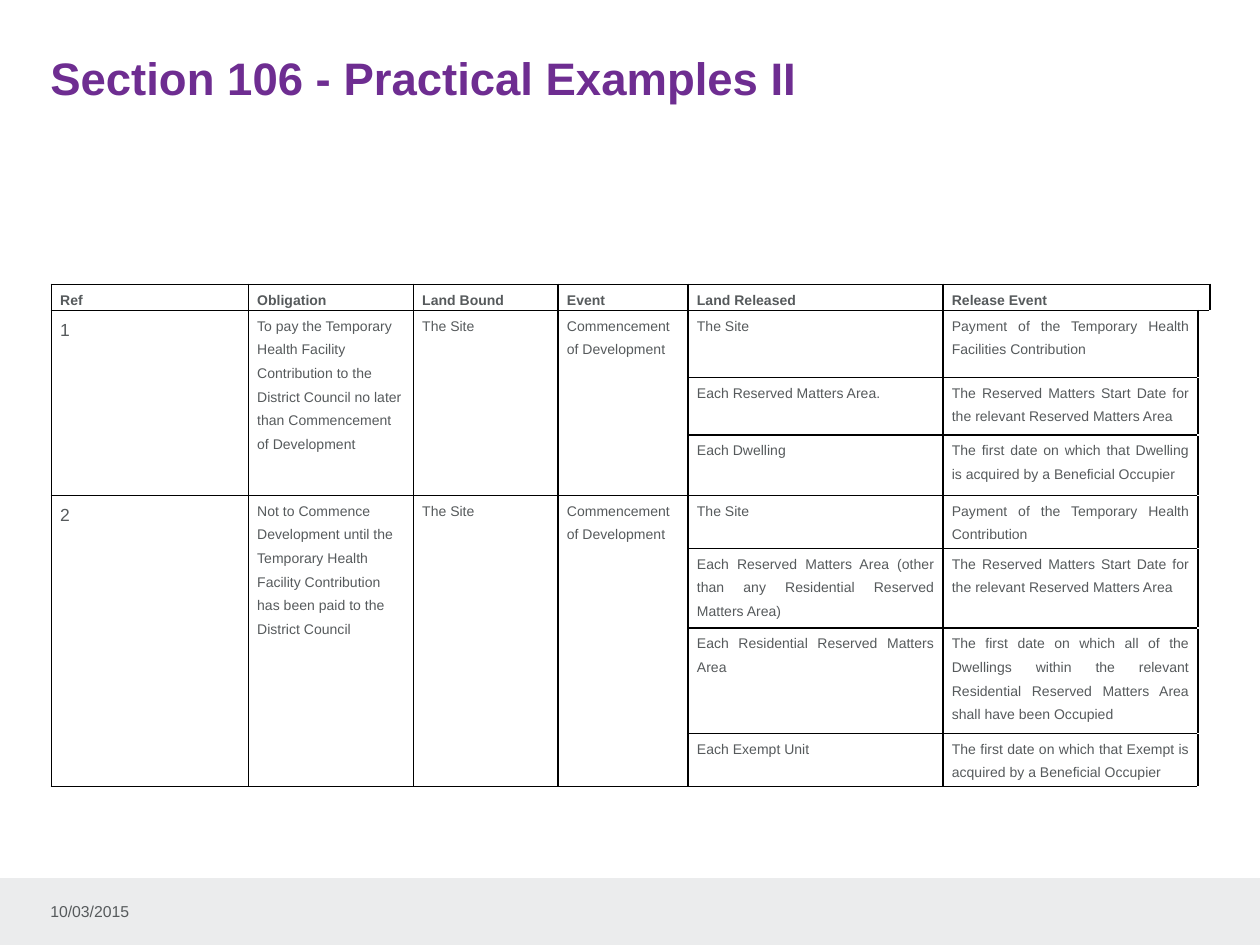
from pptx import Presentation
from pptx.dml.color import RGBColor
from pptx.enum.shapes import MSO_SHAPE as Form
from pptx.enum.text import MSO_ANCHOR as Anchor, PP_ALIGN as Align
from pptx.oxml import parse_xml
from pptx.oxml.ns import nsdecls
from pptx.util import Pt

PURPLE = RGBColor(0x6E, 0x2D, 0x91)
GREY = RGBColor(0x56, 0x5A, 0x5C)
PALE = RGBColor(0xEB, 0xEC, 0xED)
BLACK = RGBColor(0, 0, 0)

COLS = [112.6, 94.3, 82.7, 74.3, 145.7, 145.7, 6.9]
ROWS = [15, 38.2, 33, 34.5, 30.2, 45.6, 60.2, 30.2]
HEADS = ["Ref", "Obligation", "Land Bound", "Event", "Land Released", "Release Event"]
START = "The Reserved Matters Start Date for the relevant Reserved Matters Area"
GROUPS = [
    (["1", "To pay the Temporary Health Facility Contribution to the District Council "
      "no later than Commencement of Development", "The Site", "Commencement of Development"],
     [("The Site", "Payment of the Temporary Health Facilities Contribution"),
      ("Each Reserved Matters Area.", START),
      ("Each Dwelling", "The first date on which that Dwelling is acquired by a "
       "Beneficial Occupier")]),
    (["2", "Not to Commence Development until the Temporary Health Facility Contribution "
      "has been paid to the District Council", "The Site", "Commencement of Development"],
     [("The Site", "Payment of the Temporary Health Contribution"),
      ("Each Reserved Matters Area (other than any Residential Reserved Matters Area)", START),
      ("Each Residential Reserved Matters Area", "The first date on which all of the "
       "Dwellings within the relevant Residential Reserved Matters Area shall have been "
       "Occupied"),
      ("Each Exempt Unit", "The first date on which that Exempt is acquired by a "
       "Beneficial Occupier")]),
]


def style(para, text, size, color, bold=False):
    """Write text into a paragraph with the given font values."""
    run = para.add_run()
    run.text = text
    for key, val in {"name": "Arial", "size": Pt(size), "bold": bold}.items():
        setattr(run.font, key, val)
    run.font.color.rgb = color


def label(slide, box, text, size, color, bold=False, anchor=Anchor.TOP):
    """Place a text box without margins."""
    frame = slide.shapes.add_textbox(*map(Pt, box)).text_frame
    form = {"word_wrap": True, "vertical_anchor": anchor, "margin_left": 0,
            "margin_right": 0, "margin_top": 0, "margin_bottom": 0}
    for key, val in form.items():
        setattr(frame, key, val)
    style(frame.paragraphs[0], text, size, color, bold)


def edge(cell, sides):
    """Draw black lines on the named sides of a cell."""
    props = cell._tc.get_or_add_tcPr()
    for side in sides:
        props.append(parse_xml(
            f'<a:ln{side} {nsdecls("a")} w="{Pt(1)}"><a:solidFill>'
            f'<a:srgbClr val="{BLACK}"/></a:solidFill></a:ln{side}>'))


def fill(cell, text, size=8, bold=False, align=Align.JUSTIFY):
    """Write one table cell."""
    cell.margin_left = cell.margin_right = Pt(5)
    para = cell.text_frame.paragraphs[0]
    para.alignment, para.line_spacing = align, 1.5
    style(para, text, size, GREY, bold)


def grid(slide, box):
    """Build the table of obligations."""
    table = slide.shapes.add_table(len(ROWS), len(COLS), *map(Pt, box)).table
    table.first_row = table.horz_banding = False
    for col, wide in zip(table.columns, COLS):
        col.width = Pt(wide)
    for row, high in zip(table.rows, ROWS):
        row.height = Pt(high)
    last = len(COLS) - 1
    for r in range(len(ROWS)):
        for c in range(len(COLS)):
            cell = table.cell(r, c)
            for side in ("left", "right", "top", "bottom"):
                setattr(cell, f"margin_{side}", 0)
            tail = "LT" if r == 1 else "L"
            edge(cell, tail if c == last and r else "LRTB")
            cell.fill.background()
    table.cell(0, last - 1).merge(table.cell(0, last))
    for c, head in enumerate(HEADS):
        fill(table.cell(0, c), head, bold=True)
    top = 1
    for lead, pairs in GROUPS:
        for c, text in enumerate(lead):
            cell = table.cell(top, c)
            cell.merge(table.cell(top + len(pairs) - 1, c))
            fill(cell, text, 8 if c else 10, align=Align.LEFT)
        for r, pair in enumerate(pairs, top):
            for c, text in enumerate(pair, len(lead)):
                fill(table.cell(r, c), text)
        top += len(pairs)


def footer(slide, box):
    """Draw the pale band with the date."""
    left, top, wide, high = box
    band = slide.shapes.add_shape(Form.RECTANGLE, *map(Pt, box))
    band.shadow.inherit = False
    band.fill.solid()
    band.fill.fore_color.rgb = PALE
    band.line.fill.background()
    label(slide, (left + 28.8, top + 13.7, 127.4, 10.8), "10/03/2015", 9, GREY,
          anchor=Anchor.MIDDLE)


def main():
    """Build and save the slide."""
    deck = Presentation()
    deck.slide_width, deck.slide_height = Pt(720), Pt(540)
    slide = deck.slides.add_slide(deck.slide_layouts[6])
    footer(slide, (0, 501.8, 720, 38.2))
    label(slide, (28.8, 28.8, 662.4, 31.7), "Section 106 - Practical Examples II",
          26, PURPLE, True)
    grid(slide, (29.4, 162.5, sum(COLS), sum(ROWS)))
    deck.save("out.pptx")


if __name__ == "__main__":
    main()
